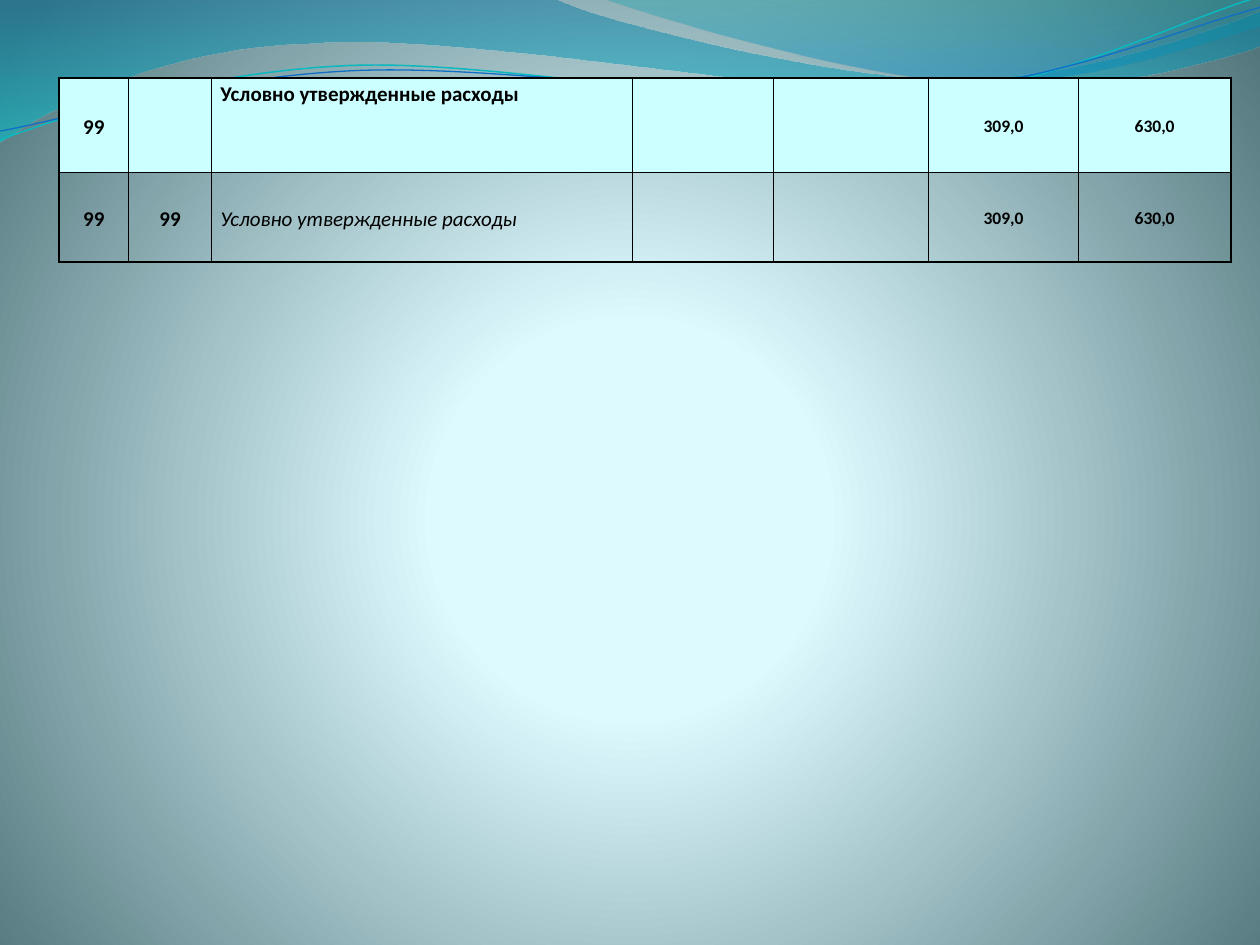
from math import cos, radians, sin

from lxml import etree
from pptx import Presentation
from pptx.dml.color import RGBColor
from pptx.enum.text import MSO_ANCHOR, PP_ALIGN
from pptx.oxml import parse_xml
from pptx.oxml.ns import nsdecls, qn
from pptx.util import Inches, Pt

CENTER, LEFT = PP_ALIGN.CENTER, PP_ALIGN.LEFT
MIDDLE, TOP = MSO_ANCHOR.MIDDLE, MSO_ANCHOR.TOP

BLACK = RGBColor(0x00, 0x00, 0x00)
PALE_CYAN = RGBColor(0xCC, 0xFF, 0xFF)
MIST = RGBColor(0xDE, 0xFB, 0xFF)
MIST_EDGE = RGBColor(0xDD, 0xFA, 0xFF)
SLATE = RGBColor(0x52, 0x76, 0x7C)
DEEP_BLUE = RGBColor(0x00, 0x74, 0xA1)
AQUA = RGBColor(0x00, 0xC6, 0xCF)
TEAL = RGBColor(0x00, 0xA1, 0xA9)
AZURE = RGBColor(0x00, 0x8B, 0xBF)
TEAL_LINE = RGBColor(0x0A, 0xB8, 0xBF)
BLUE_LINE = RGBColor(0x0F, 0x6F, 0xC6)

DOWNWARD = '<a:lin ang="5400000" scaled="0"/>'
RADIAL = ('<a:path path="circle"><a:fillToRect l="10000" t="110000" '
          'r="10000" b="100000"/></a:path>')
STRAND_TILT = -2.7
STRAND_CENTER = (4.99, 0.58)

WIDE_WAVE = [
    [(0, 0)], [(4.4, -0.01)],
    [(4.76, 0.17), (6.64, 0.63), (7.58, 0.63)],
    [(8.53, 0.63), (9.58, 0.26), (10, 0.09)],
    [(10.01, 0.36)],
    [(9.83, 0.44), (8.7, 0.76), (7.46, 0.75)],
    [(6.22, 0.75), (3.82, 0.28), (2.57, 0.34)],
    [(1.29, 0.36), (0.46, 0.83), (-0.01, 1.13)],
    [(0, 0)],
]
RIGHT_WAVE = [
    [(4.79, -0.01)],
    [(5.09, 0.11), (6.82, 0.62), (7.69, 0.65)],
    [(8.56, 0.69), (9.61, 0.32), (10, 0.21)],
    [(10, 0)], [(4.79, -0.01)],
]
TEAL_STRAND = [
    [(0, 1.11)],
    [(0.48, 0.93), (1.58, 0.57), (2.77, 0.52)],
    [(3.95, 0.47), (5.93, 0.89), (7.13, 0.8)],
    [(8.33, 0.71), (9.38, 0.15), (9.98, -0.02)],
]
BLUE_STRAND = [
    [(0, 1.04)],
    [(0.47, 0.96), (1.64, 0.61), (2.83, 0.56)],
    [(4.03, 0.51), (5.97, 0.84), (7.17, 0.75)],
    [(8.36, 0.67), (9.41, 0.21), (10, 0.06)],
]

COLUMN_WIDTHS = [0.55, 0.66, 3.34, 1.12, 1.23, 1.19, 1.21]
ROW_HEIGHTS = [0.75, 0.71]
EXPENSES = [
    ["99", "", "Условно утвержденные расходы", "", "", "309,0", "630,0"],
    ["99", "99", "Условно утвержденные расходы", "", "", "309,0", "630,0"],
]
NAME_COLUMN, FIRST_AMOUNT_COLUMN = 2, 5


def set_gradient(owner, fill, stops, direction):
    fill.solid()
    solid = owner.find(".//" + qn("a:solidFill"))
    stop_list = "".join(
        f'<a:gs pos="{position * 1000}"><a:srgbClr val="{color}">'
        f'<a:alpha val="{opacity * 1000}"/></a:srgbClr></a:gs>'
        for position, color, opacity in stops)
    gradient = parse_xml(
        f'<a:gradFill {nsdecls("a")} rotWithShape="1">'
        f'<a:gsLst>{stop_list}</a:gsLst>{direction}</a:gradFill>')
    solid.getparent().replace(solid, gradient)


def turn(point, center, angle):
    x, y = point[0] - center[0], point[1] - center[1]
    turned_x = x * cos(angle) - y * sin(angle)
    turned_y = x * sin(angle) + y * cos(angle)
    return center[0] + turned_x, center[1] + turned_y


def bend_curves(shape, segments):
    moves = iter(shape.element.findall(".//" + qn("a:lnTo")))
    for segment in segments[1:]:
        first, *rest = [next(moves) for point in segment]
        if rest:
            first.tag = qn("a:cubicBezTo")
            for move in rest:
                first.append(move[0])
                move.getparent().remove(move)


def add_outline(shapes, segments, left, top, close, tilt=0):
    points = [turn(point, STRAND_CENTER, radians(-tilt))
              for segment in segments for point in segment]
    points = [(left + Inches(x), top + Inches(y)) for x, y in points]
    builder = shapes.build_freeform(*points[0])
    builder.add_line_segments(points[1:], close=close)
    shape = builder.convert_to_shape()
    bend_curves(shape, segments)
    shape.rotation = tilt
    shape.shadow.inherit = False
    return shape


def add_waves(page, left, top):
    waves = [
        (WIDE_WAVE, [(0, DEEP_BLUE, 45), (100, AQUA, 55)]),
        (RIGHT_WAVE, [(0, TEAL, 30), (80, AZURE, 45)]),
    ]
    for segments, stops in waves:
        wave = add_outline(page.shapes, segments, left, top, True)
        set_gradient(wave.element, wave.fill, stops, DOWNWARD)
        wave.line.fill.background()
    group = page.shapes.add_group_shape()
    strands = [(TEAL_STRAND, TEAL_LINE, 0.85), (BLUE_STRAND, BLUE_LINE, 0.75)]
    for segments, color, width in strands:
        strand = add_outline(group.shapes, segments, left, top, False,
                             STRAND_TILT)
        strand.fill.background()
        strand.line.color.rgb = color
        strand.line.width = Pt(width)


def set_borders(cell):
    properties = cell._tc.get_or_add_tcPr()
    for index, side in enumerate(("lnL", "lnR", "lnT", "lnB")):
        border = etree.Element(qn("a:" + side), w=str(Pt(1)))
        fill = etree.SubElement(border, qn("a:solidFill"))
        etree.SubElement(fill, qn("a:srgbClr"), val=str(BLACK))
        properties.insert(index, border)


def format_cell(cell, text, row, column):
    if row == 0:
        cell.fill.solid()
        cell.fill.fore_color.rgb = PALE_CYAN
    else:
        cell.fill.background()
    set_borders(cell)
    if not text:
        return
    is_name = column == NAME_COLUMN
    is_amount = column >= FIRST_AMOUNT_COLUMN
    is_detail_name = is_name and row == 1
    cell.margin_left = cell.margin_right = Inches(0.07)
    cell.margin_top = cell.margin_bottom = 0
    cell.vertical_anchor = TOP if is_name and row == 0 else MIDDLE
    cell.text_frame.text = text
    para = cell.text_frame.paragraphs[0]
    para.alignment = LEFT if is_name else CENTER
    para.line_spacing = 1.15
    if row == 1 and (is_name or is_amount):
        para.space_after = Pt(10)
    font = para.runs[0].font
    font.name = "Calibri"
    font.size = Pt(10 if is_amount else 12)
    font.bold = not is_detail_name
    font.italic = is_detail_name
    font.color.rgb = BLACK


def add_expense_table(page, left, top, width, height):
    table = page.shapes.add_table(
        len(ROW_HEIGHTS), len(COLUMN_WIDTHS), left, top, width, height).table
    table.first_row = False
    table.horz_banding = False
    for column, size in zip(table.columns, COLUMN_WIDTHS):
        column.width = Inches(size)
    for row, size in zip(table.rows, ROW_HEIGHTS):
        row.height = Inches(size)
    for row, texts in enumerate(EXPENSES):
        for column, text in enumerate(texts):
            format_cell(table.cell(row, column), text, row, column)


def main():
    deck = Presentation()
    deck.slide_width, deck.slide_height = Inches(10), Inches(7.5)
    page = deck.slides.add_slide(deck.slide_layouts[6])
    set_gradient(page.element, page.background.fill,
                 [(0, MIST, 100), (25, MIST_EDGE, 100), (100, SLATE, 100)],
                 RADIAL)
    add_waves(page, 0, 0)
    add_expense_table(page, Inches(0.47), Inches(0.62),
                      Inches(9.3), Inches(1.46))
    deck.save("out.pptx")


if __name__ == "__main__":
    main()
